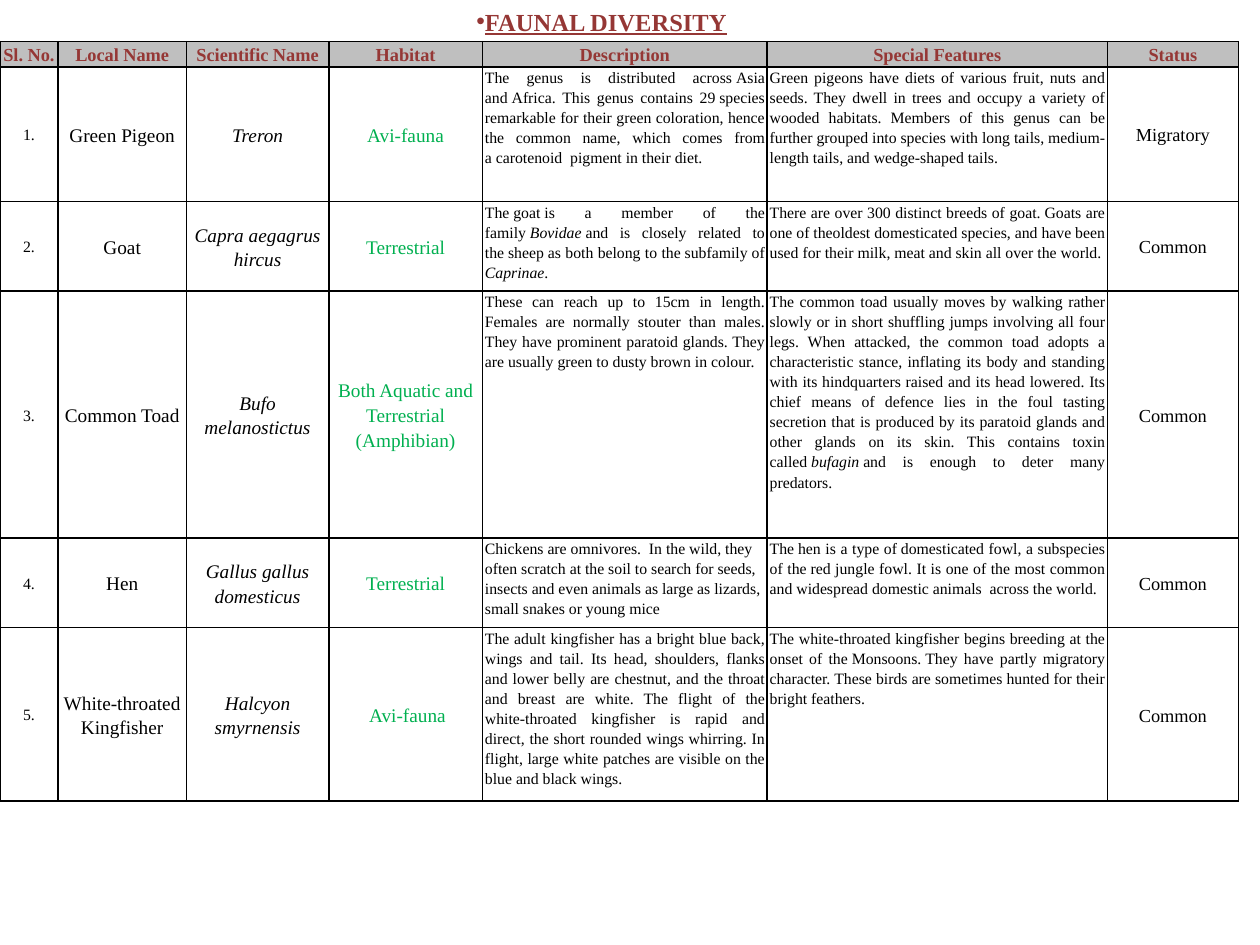
from dataclasses import dataclass

from lxml import etree
from pptx import Presentation
from pptx.dml.color import RGBColor
from pptx.enum import text
from pptx.oxml.ns import qn
from pptx.util import Inches, Pt

CENTER, JUSTIFY, LEFT = text.PP_ALIGN.CENTER, text.PP_ALIGN.JUSTIFY, text.PP_ALIGN.LEFT
MIDDLE, TOP = text.MSO_ANCHOR.MIDDLE, text.MSO_ANCHOR.TOP
TIE, HARD_SPACE = "~", chr(160)


@dataclass(frozen=True)
class Theme:
    face: str = "Times New Roman"
    heading: str = "953735"
    body: str = "000000"
    habitat: str = "00B050"
    header_fill: str = "BFBFBF"
    border: str = "000000"
    title_size: float = 14
    label_size: float = 10.5
    name_size: float = 11
    detail_size: float = 9
    line_spacing: float = 1.15
    border_width: float = 1


@dataclass(frozen=True)
class CellStyle:
    size: float
    color: str
    bold: bool = False
    italic: bool = False
    align: int = CENTER
    anchor: int = MIDDLE


THEME = Theme()
HEADER = CellStyle(THEME.label_size, THEME.heading, bold=True)
NUMBER = CellStyle(THEME.detail_size, THEME.body)
NAME = CellStyle(THEME.name_size, THEME.body)
SPECIES = CellStyle(THEME.name_size, THEME.body, italic=True)
HABITAT = CellStyle(THEME.name_size, THEME.habitat)
DETAIL = CellStyle(THEME.detail_size, THEME.body, align=JUSTIFY, anchor=TOP)
DETAIL_LEFT = CellStyle(THEME.detail_size, THEME.body, align=LEFT, anchor=TOP)
STATUS = CellStyle(THEME.label_size, THEME.body)

COLUMNS = [
    ("Sl. No.", 0.46, NUMBER),
    ("Local Name", 1.02, NAME),
    ("Scientific Name", 1.13, SPECIES),
    ("Habitat", 1.22, HABITAT),
    ("Description", 2.26, DETAIL),
    ("Special Features", 2.7, DETAIL),
    ("Status", 1.04, STATUS),
]
ROW_HEIGHTS = [0.2, 1.07, 0.71, 1.96, 0.71, 1.38]
STYLE_EXCEPTIONS = {("Hen", "Description"): DETAIL_LEFT}

FAUNA = [
    ("Green Pigeon", "Treron", "Avi-fauna",
     "The genus is distributed across~Asia and~Africa. This genus contains 29~species "
     "remarkable for their green coloration, hence the common name, which comes from "
     "a~carotenoid ~pigment in their diet.",
     "Green pigeons have diets of various fruit, nuts and seeds. They dwell in trees and "
     "occupy a variety of wooded habitats. Members of this genus can be further grouped "
     "into species with long tails, medium-length tails, and wedge-shaped tails.~",
     "Migratory"),
    ("Goat", "Capra aegagrus hircus", "Terrestrial",
     "The~goat~is a member of the family~*Bovidae*~and is closely related to "
     "the~sheep~as both belong to the~subfamily~of *Caprinae*.",
     "There are over 300 distinct breeds of goat.~Goats are one of theoldest domesticated "
     "species, and have been used for their milk, meat and skin all over the world.",
     "Common"),
    ("Common Toad", "Bufo melanostictus", "Both Aquatic and Terrestrial (Amphibian)",
     "These can reach up to 15cm in length. Females are normally stouter than males. They "
     "have prominent paratoid glands. They are usually green to dusty brown in colour.",
     "The common toad usually moves by walking rather slowly or in short shuffling jumps "
     "involving all four legs. When attacked, the common toad adopts a characteristic "
     "stance, inflating its body and standing with its hindquarters raised and its head "
     "lowered. Its chief means of defence lies in the foul tasting secretion that is "
     "produced by its paratoid glands and other glands on its skin. This contains toxin "
     "called~*bufagin*~and is enough to deter many predators.",
     "Common"),
    ("Hen", "Gallus gallus domesticus", "Terrestrial",
     "Chickens are~omnivores. ~In the wild, they often scratch at the soil to search for "
     "seeds, insects and even animals as large as~lizards, small snakes or young~mice",
     "The~hen is a type of~domesticated fowl, a subspecies of the~red jungle fowl. It is "
     "one of the most common and widespread~domestic animals ~across the world.",
     "Common"),
    ("White-throated Kingfisher", "Halcyon smyrnensis", " Avi-fauna",
     "The adult kingfisher has a bright blue back, wings and tail. Its head, shoulders, "
     "flanks and lower belly are chestnut, and the throat and breast are white. The flight "
     "of the white-throated kingfisher is rapid and direct, the short rounded wings "
     "whirring. In flight, large white patches are visible on the blue and black wings.",
     "The white-throated kingfisher begins breeding at the onset of the~Monsoons.~They have "
     "partly migratory character. These birds are sometimes hunted for their bright feathers.",
     "Common"),
]


def apply(target, values):
    for name, value in values.items():
        setattr(target, name, value)


class SlideBuilder:
    def __init__(self, deck, theme):
        self.theme = theme
        self.page = deck.slides.add_slide(deck.slide_layouts[5])

    def add_span(self, para, words, size, color, **extra):
        span = para.add_run()
        span.text = words.replace(TIE, HARD_SPACE)
        apply(span.font, {"name": self.theme.face, "size": Pt(size), **extra})
        span.font.color.rgb = RGBColor.from_string(color)

    def title(self, words, left, top, width, height):
        box = self.page.shapes.title
        apply(box, {"left": Inches(left), "top": Inches(top),
                    "width": Inches(width), "height": Inches(height)})
        frame = box.text_frame
        apply(frame, {"word_wrap": False, "vertical_anchor": MIDDLE,
                      "margin_left": 0, "margin_right": 0,
                      "auto_size": text.MSO_AUTO_SIZE.NONE})
        para = frame.paragraphs[0]
        para.alignment = CENTER
        properties = para._p.get_or_add_pPr()
        properties.set("marL", "0")
        properties.set("indent", "0")
        etree.SubElement(properties, qn("a:buFont"), typeface="Arial")
        etree.SubElement(properties, qn("a:buChar"), char="•")
        self.add_span(para, words, self.theme.title_size, self.theme.heading,
                      bold=True, underline=True)

    def border(self, cell):
        properties = cell._tc.get_or_add_tcPr()
        for index, side in enumerate(("lnL", "lnR", "lnT", "lnB")):
            line = etree.Element(qn(f"a:{side}"), w=str(Pt(self.theme.border_width)))
            fill = etree.SubElement(line, qn("a:solidFill"))
            etree.SubElement(fill, qn("a:srgbClr"), val=self.theme.border)
            properties.insert(index, line)

    def cell(self, cell, words, style, fill=None):
        apply(cell, {"margin_left": Inches(0.02), "margin_right": Inches(0.02),
                     "margin_top": 0, "margin_bottom": 0,
                     "vertical_anchor": style.anchor})
        if fill:
            cell.fill.solid()
            cell.fill.fore_color.rgb = RGBColor.from_string(fill)
        else:
            cell.fill.background()
        self.border(cell)
        para = cell.text_frame.paragraphs[0]
        apply(para, {"alignment": style.align, "line_spacing": self.theme.line_spacing})
        for index, part in enumerate(words.split("*")):
            self.add_span(para, part, style.size, style.color, bold=style.bold,
                          italic=style.italic or index % 2 == 1)

    def table(self, columns, heights, records, left, top):
        widths = [width for _, width, _ in columns]
        table = self.page.shapes.add_table(
            len(heights), len(columns), Inches(left), Inches(top),
            Inches(sum(widths)), Inches(sum(heights))).table
        apply(table, {"first_row": False, "horz_banding": False})
        for row, height in zip(table.rows, heights):
            row.height = Inches(height)
        for index, (heading, width, style) in enumerate(columns):
            table.columns[index].width = Inches(width)
            self.cell(table.cell(0, index), heading, HEADER, self.theme.header_fill)
            for number, record in enumerate(records, 1):
                words = (f"{number}.", *record)[index]
                chosen = STYLE_EXCEPTIONS.get((record[0], heading), style)
                self.cell(table.cell(number, index), words, chosen)


def main():
    deck = Presentation()
    apply(deck, {"slide_width": Inches(10), "slide_height": Inches(7.5)})
    builder = SlideBuilder(deck, THEME)
    builder.table(COLUMNS, ROW_HEIGHTS, FAUNA, 0, 0.33)
    builder.title("FAUNAL DIVERSITY", 3.67, 0, 2.21, 0.34)
    deck.save("out.pptx")


if __name__ == "__main__":
    main()
